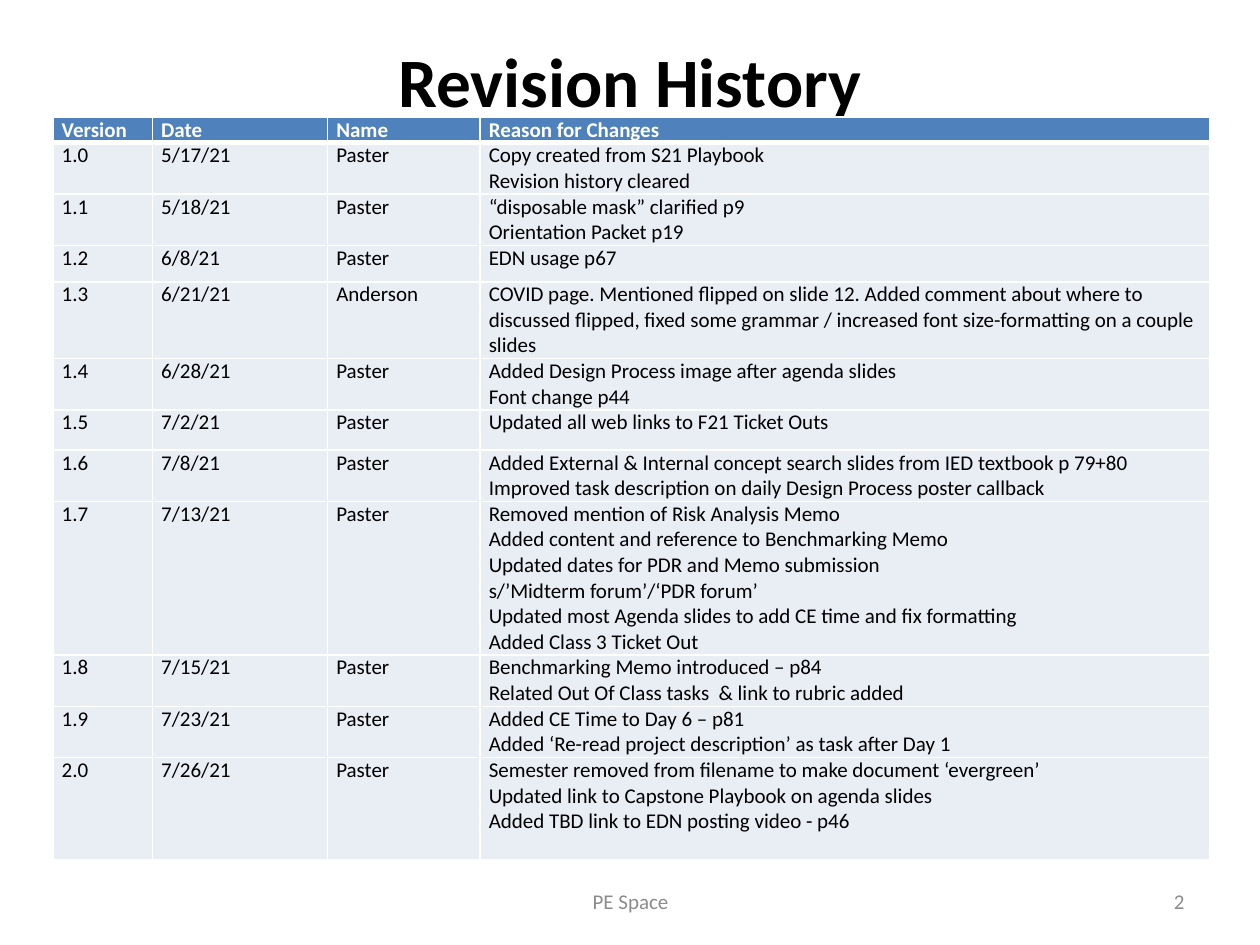
from lxml import etree
from pptx import Presentation
from pptx import util as u
from pptx.dml import color
from pptx.enum import text
from pptx.oxml import ns

MIDDLE = text.MSO_ANCHOR.MIDDLE
TOP = text.MSO_ANCHOR.TOP
CENTER = text.PP_ALIGN.CENTER
LEFT = text.PP_ALIGN.LEFT
RIGHT = text.PP_ALIGN.RIGHT

HEADERS = ["Version", "Date", "Name", "Reason for Changes"]
COLUMN_WIDTHS = [0.79, 1.39, 1.21, 5.79]
HEADER_HEIGHT = 0.2
REVISIONS = [
    ("1.0", "5/17/21", "Paster", 0.4,
     ["Copy created from S21 Playbook", "Revision history cleared"]),
    ("1.1", "5/18/21", "Paster", 0.4,
     ["“disposable mask” clarified p9", "Orientation Packet p19"]),
    ("1.2", "6/8/21", "Paster", 0.29, ["EDN usage p67"]),
    ("1.3", "6/21/21", "Anderson", 0.6,
     ["COVID page. Mentioned flipped on slide 12. Added comment about where to "
      "discussed flipped, fixed some grammar / increased font size-formatting "
      "on a couple slides"]),
    ("1.4", "6/28/21", "Paster", 0.4,
     ["Added Design Process image after agenda slides", "Font change p44"]),
    ("1.5", "7/2/21", "Paster", 0.32, ["Updated all web links to F21 Ticket Outs"]),
    ("1.6", "7/8/21", "Paster", 0.4,
     ["Added External & Internal concept search slides from IED textbook p 79+80",
      "Improved task description on daily Design Process poster callback"]),
    ("1.7", "7/13/21", "Paster", 1.2,
     ["Removed mention of Risk Analysis Memo",
      "Added content and reference to Benchmarking Memo",
      "Updated dates for PDR and Memo submission",
      "s/’Midterm forum’/‘PDR forum’",
      "Updated most Agenda slides to add CE time and fix formatting",
      "Added Class 3 Ticket Out"]),
    ("1.8", "7/15/21", "Paster", 0.4,
     ["Benchmarking Memo introduced – p84",
      "Related Out Of Class tasks  & link to rubric added"]),
    ("1.9", "7/23/21", "Paster", 0.4,
     ["Added CE Time to Day 6 – p81",
      "Added ‘Re-read project description’ as task after Day 1"]),
    ("2.0", "7/26/21", "Paster", 0.81,
     ["Semester removed from filename to make document ‘evergreen’",
      "Updated link to Capstone Playbook on agenda slides",
      "Added TBD link to EDN posting video - p46"]),
]


def rgb(value):
    return color.RGBColor.from_string(value)


class SlideBuilder:
    font = "Calibri"
    ink = "000000"
    paper = "FFFFFF"
    muted = "8C8C8C"
    header_fill = "4F81BD"
    body_fill = "E9EDF4"

    def __init__(self, prs):
        self.s = prs.slides.add_slide(prs.slide_layouts[5])

    def add_lines(self, tf, lines, size, ink, bold=False, align=LEFT):
        for i, line in enumerate(lines):
            p = tf.paragraphs[0] if i == 0 else tf.add_paragraph()
            p.alignment = align
            r = p.add_run()
            r.text = line
            formats = {"name": self.font, "size": u.Pt(size), "bold": bold}
            for key, value in formats.items():
                setattr(r.font, key, value)
            r.font.color.rgb = rgb(ink)

    def title(self, line, left, top, width, height):
        sp = self.s.shapes.title
        box = {"left": left, "top": top, "width": width, "height": height}
        for key, value in box.items():
            setattr(sp, key, u.Inches(value))
        tf = sp.text_frame
        tf.vertical_anchor = TOP
        tf.margin_top = 0
        self.add_lines(tf, [line], 39.6, self.ink, True, CENTER)

    def footer(self, line, left, width, align):
        sp = self.s.shapes.add_textbox(
            u.Inches(left), u.Inches(6.95), u.Inches(width), u.Inches(0.4))
        tf = sp.text_frame
        tf.word_wrap = True
        tf.vertical_anchor = MIDDLE
        self.add_lines(tf, [line], 12, self.muted, align=align)

    def borders(self, cell, weights):
        tc_pr = cell._tc.get_or_add_tcPr()
        for i, (side, weight) in enumerate(weights.items()):
            ln = etree.Element(ns.qn(f"a:ln{side}"), w=str(u.Pt(weight)))
            fill = etree.SubElement(ln, ns.qn("a:solidFill"))
            etree.SubElement(fill, ns.qn("a:srgbClr"), val=self.paper)
            tc_pr.insert(i, ln)

    def cell(self, cell, lines, row):
        header = row == 0
        margins = {"margin_left": 0.07, "margin_right": 0.07,
                   "margin_top": 0, "margin_bottom": 0}
        for key, value in margins.items():
            setattr(cell, key, u.Inches(value))
        cell.fill.solid()
        cell.fill.fore_color.rgb = rgb(self.header_fill if header else self.body_fill)
        self.borders(cell, {"L": 1, "R": 1, "T": 3 if row == 1 else 1,
                            "B": 3 if header else 1})
        self.add_lines(cell.text_frame, lines, 12,
                       self.paper if header else self.ink, header)

    def table(self, left, top, widths, heights, rows):
        frame = self.s.shapes.add_table(
            len(rows), len(widths), u.Inches(left), u.Inches(top),
            u.Inches(sum(widths)), u.Inches(sum(heights)))
        table = frame.table
        for column, width in zip(table.columns, widths):
            column.width = u.Inches(width)
        for i, (height, values) in enumerate(zip(heights, rows)):
            table.rows[i].height = u.Inches(height)
            for j, lines in enumerate(values):
                self.cell(table.cell(i, j), lines, i)


def main():
    prs = Presentation()
    prs.slide_width, prs.slide_height = u.Inches(10), u.Inches(7.5)
    slide = SlideBuilder(prs)
    slide.title("Revision History", 0.5, 0.3, 9, 1.25)
    rows = [[[header] for header in HEADERS]]
    heights = [HEADER_HEIGHT]
    for version, date, name, height, reasons in REVISIONS:
        rows.append([[version], [date], [name], reasons])
        heights.append(height)
    slide.table(0.42, 0.93, COLUMN_WIDTHS, heights, rows)
    slide.footer("PE Space", 3.42, 3.17, CENTER)
    slide.footer("2", 7.17, 2.33, RIGHT)
    prs.save("out.pptx")


if __name__ == "__main__":
    main()
